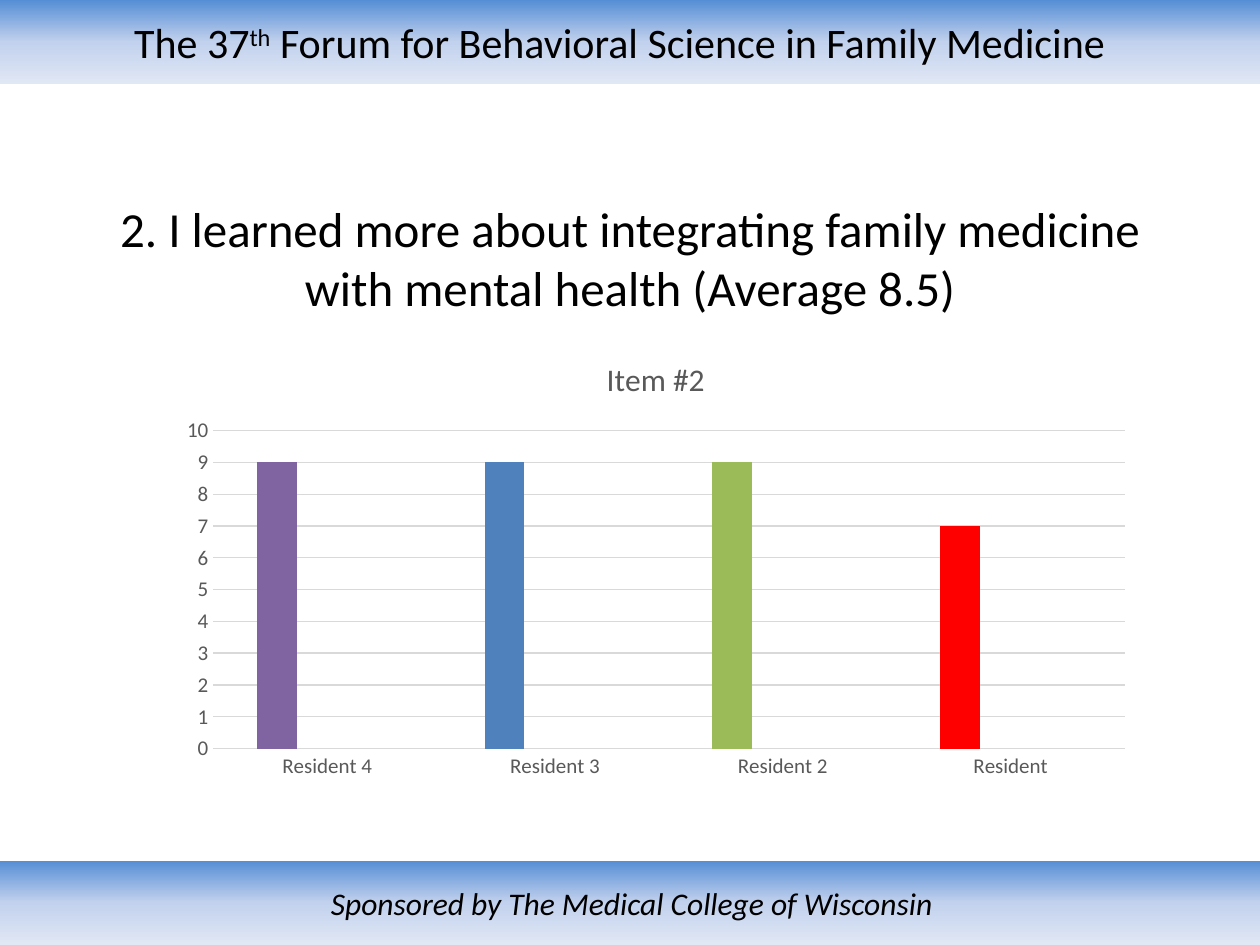
from dataclasses import dataclass
from typing import Any

from lxml import etree
from pptx import Presentation
from pptx import util as u
from pptx.chart import data as chart_data
from pptx.dml.color import RGBColor
from pptx.enum import chart as charts, shapes, text
from pptx.oxml import ns


@dataclass(frozen=True)
class Theme:
    font: str = "Calibri"
    ink: str = "000000"
    chart_ink: str = "595959"
    rule: str = "D9D9D9"
    gradient: tuple = ((0, "558ED5"), (50, "C2D1ED"), (100, "E1E8F5"))
    series: tuple = ("4F81BD", "C0504D", "9BBB59")
    header_size: int = 24
    footer_size: int = 18
    question_size: int = 28
    chart_title_size: int = 18
    axis_size: int = 12


@dataclass(frozen=True)
class Run:
    words: str
    superscript: bool = False


@dataclass(frozen=True)
class TextBlock:
    box: tuple[float, float, float, float]
    runs: tuple[Run, ...]
    size: int
    italic: bool = False
    banner: bool = False
    right_inset: float = 0.1


@dataclass(frozen=True)
class Rating:
    resident: str
    score: int
    color: str


THEME = Theme()

BLOCKS = (
    TextBlock((0, 0, 10, 0.67),
              (Run("The 37"), Run("th", superscript=True),
               Run(" Forum for Behavioral Science in Family Medicine")),
              THEME.header_size, banner=True, right_inset=0.26),
    TextBlock((0, 6.83, 10.03, 0.67),
              (Run("Sponsored by The Medical College of Wisconsin"),),
              THEME.footer_size, italic=True, banner=True),
    TextBlock((0.5, 1.67, 9, 0.75),
              (Run("2. I learned more about integrating family medicine "
                   "with mental health (Average 8.5)"),),
              THEME.question_size),
)

RATINGS = (
    Rating("Resident 4", 9, "8064A2"),
    Rating("Resident 3", 9, "4F81BD"),
    Rating("Resident 2", 9, "9BBB59"),
    Rating("Resident", 7, "FF0000"),
)


def rgb(value: str) -> RGBColor:
    return RGBColor.from_string(value)


def set_all(target: Any, formats: dict[str, Any]) -> None:
    for name, value in formats.items():
        setattr(target, name, value)


def style_font(font: Any, size: int, color: str, italic: bool = False) -> None:
    set_all(font, {"name": THEME.font, "size": u.Pt(size), "bold": False, "italic": italic})
    font.color.rgb = rgb(color)


def fill_gradient(shape: Any) -> None:
    """Fill from top to bottom with the theme's three stops."""
    shape.fill.gradient()
    shape.fill.gradient_angle = 270
    stops = shape.fill._fill._gradFill.find(ns.qn("a:gsLst"))
    for old in list(stops):
        stops.remove(old)
    for percent, color in THEME.gradient:
        stop = etree.SubElement(stops, ns.qn("a:gs"), pos=str(percent * 1000))
        etree.SubElement(stop, ns.qn("a:srgbClr"), val=color)


def add_text_block(slide: Any, block: TextBlock) -> None:
    box = [u.Inches(length) for length in block.box]
    if block.banner:
        shape = slide.shapes.add_shape(shapes.MSO_SHAPE.RECTANGLE, *box)
        shape.shadow.inherit = False
        shape.line.fill.background()
        fill_gradient(shape)
    else:
        shape = slide.shapes.add_textbox(*box)
    set_all(shape.text_frame, {
        "word_wrap": True,
        "vertical_anchor": text.MSO_ANCHOR.MIDDLE,
        "margin_right": u.Inches(block.right_inset),
    })
    paragraph = shape.text_frame.paragraphs[0]
    paragraph.alignment = text.PP_ALIGN.CENTER
    for part in block.runs:
        run = paragraph.add_run()
        run.text = part.words
        style_font(run.font, block.size, THEME.ink, block.italic)
        if part.superscript:
            run._r.get_or_add_rPr().set("baseline", "30000")


def style_axes(chart: Any) -> None:
    for axis in (chart.category_axis, chart.value_axis):
        set_all(axis, {"major_tick_mark": charts.XL_TICK_MARK.NONE,
                       "minor_tick_mark": charts.XL_TICK_MARK.NONE})
        style_font(axis.tick_labels.font, THEME.axis_size, THEME.chart_ink)
    scores = chart.value_axis
    set_all(scores, {"minimum_scale": 0, "maximum_scale": 10, "major_unit": 1,
                     "has_major_gridlines": True})
    scores.format.line.fill.background()
    for line in (chart.category_axis.format.line, scores.major_gridlines.format.line):
        line.color.rgb = rgb(THEME.rule)
        line.width = u.Pt(0.75)


def add_ratings_chart(slide: Any) -> None:
    ratings = chart_data.CategoryChartData()
    ratings.categories = [rating.resident for rating in RATINGS]
    ratings.add_series("Series 1", [rating.score for rating in RATINGS])
    for name in ("Series 2", "Series 3"):
        ratings.add_series(name, [None] * len(RATINGS))
    chart = slide.shapes.add_chart(
        charts.XL_CHART_TYPE.COLUMN_CLUSTERED,
        u.Inches(1.33), u.Inches(2.67), u.Inches(7.75), u.Inches(3.58), ratings).chart
    style_font(chart.font, 10, THEME.ink)
    set_all(chart, {"has_legend": False, "has_title": True})

    heading = chart.chart_title.text_frame
    heading.text = "Item #2"
    style_font(heading.paragraphs[0].runs[0].font, THEME.chart_title_size, THEME.chart_ink)
    chart.chart_title.include_in_layout = False
    style_axes(chart)

    plot = chart.plots[0]
    set_all(plot, {"gap_width": 219, "overlap": -27, "vary_by_categories": False})
    for series, color in zip(plot.series, THEME.series):
        series.format.fill.solid()
        series.format.fill.fore_color.rgb = rgb(color)
    for index, rating in enumerate(RATINGS):
        fill = plot.series[0].points[index].format.fill
        fill.solid()
        fill.fore_color.rgb = rgb(rating.color)


def main() -> None:
    deck = Presentation()
    set_all(deck, {"slide_width": u.Inches(10), "slide_height": u.Inches(7.5)})
    slide = deck.slides.add_slide(deck.slide_layouts[6])
    for block in BLOCKS:
        add_text_block(slide, block)
    add_ratings_chart(slide)
    deck.save("out.pptx")


if __name__ == "__main__":
    main()
